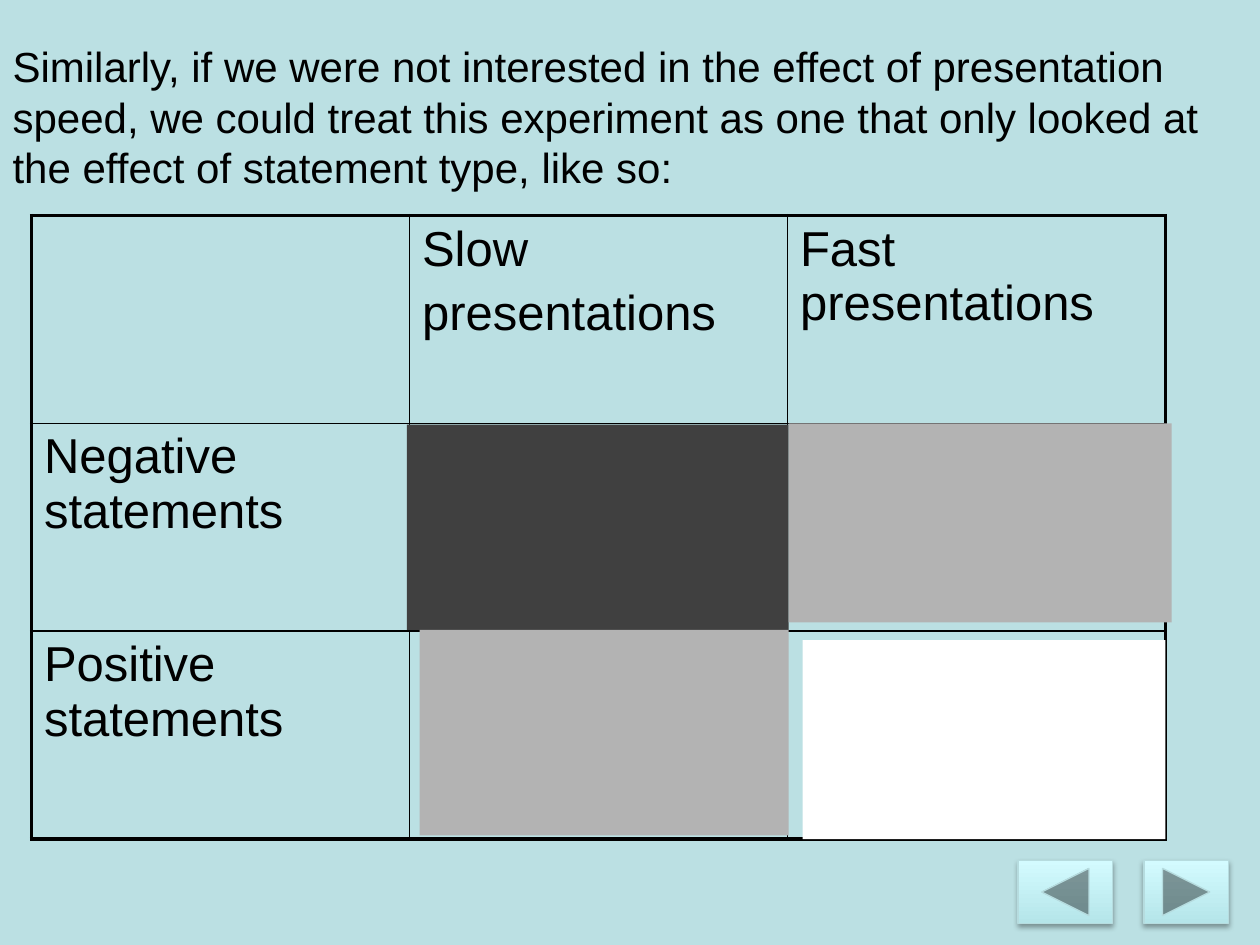
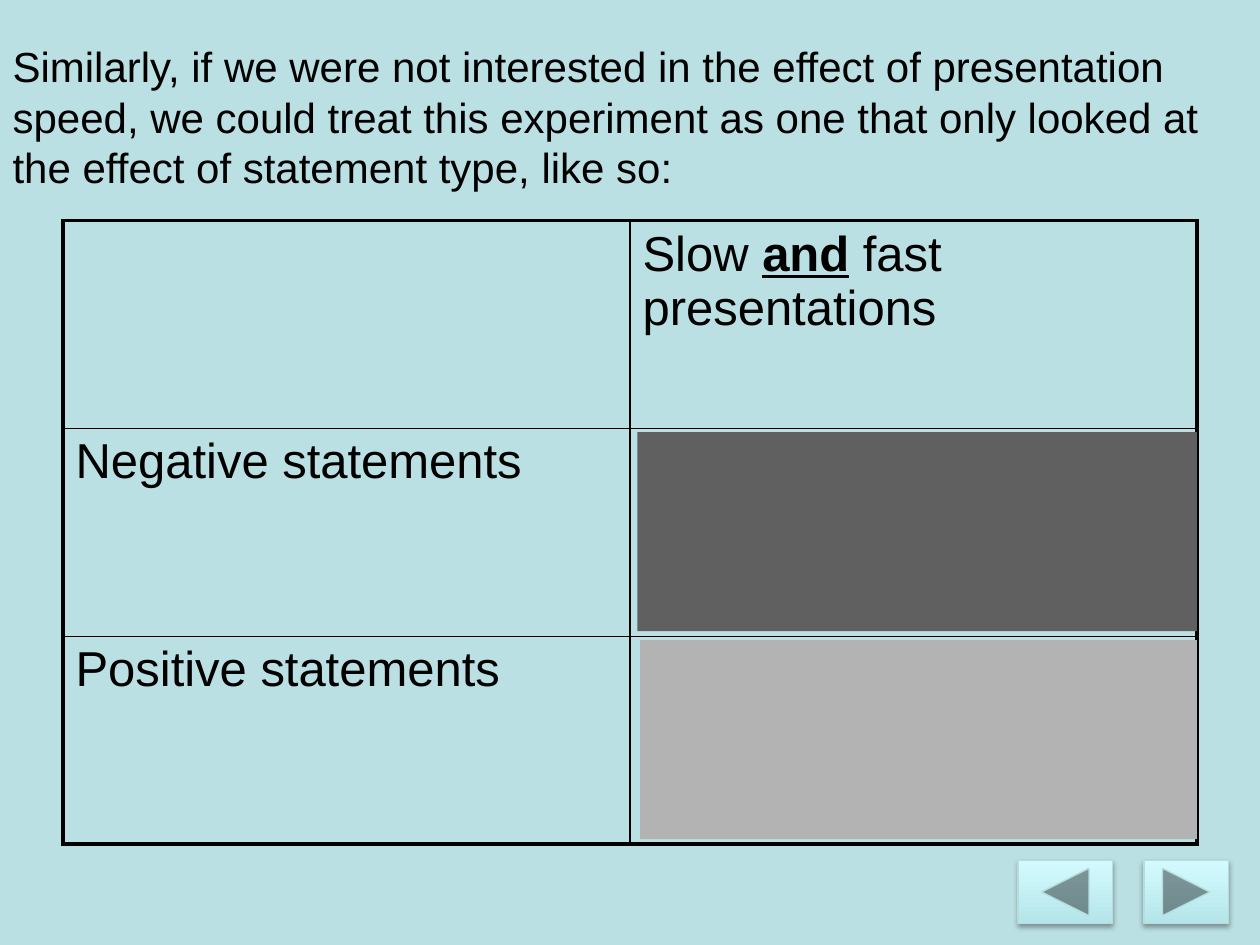
from lxml import etree
from pptx import Presentation
from pptx import util as u
from pptx.dml.color import RGBColor
from pptx.enum import shapes, text
from pptx.oxml import parse_xml
from pptx.oxml.ns import nsdecls

C = {k: RGBColor.from_string(v) for k, v in {
    "back": "BBE0E3", "ink": "000000", "white": "FFFFFF", "light": "B3B3B3",
    "mid": "606060", "dark": "404040", "button_low": "B5E5E9",
    "button_high": "D3FBFF", "button_line": "B6DCDF"}.items()}
INTRO = ("Similarly, if we were not interested in the effect of presentation speed, "
         "we could treat this experiment as one that only looked at the effect of "
         "statement type, like so:")
PLAIN, STRESSED = {}, {"bold": True, "underline": True}
THIN, THICK = 1, 2.25
TABLE_W, TABLE_H = 36, 19.8

prs = Presentation()
prs.slide_width, prs.slide_height = u.Inches(10), u.Inches(7.5)
COL, ROW = prs.slide_width / 40, prs.slide_height / 30


def grid(left, top, width, height):
    """Turn grid columns and rows into a position and size."""
    return [round(n * unit) for n, unit in
            zip((left, top, width, height), (COL, ROW, COL, ROW))]


def add_run(p, words, size, **style):
    r = p.add_run()
    r.text = words
    r.font.color.rgb = C["ink"]
    for name, value in {"name": "Arial", "size": u.Pt(size), **style}.items():
        setattr(r.font, name, value)


# Each header cell is a list of paragraphs, each paragraph a list of runs.
pages = [
    {"table": (1, 6.84),
     "headers": [[[("Slow", PLAIN)], [("presentations", PLAIN)]],
                 [[("Fast presentations", PLAIN)]]],
     "blocks": [("white", (25.48, 20.32, 11.52, 6.32)),
                ("dark", (12.92, 13.48, 12.12, 6.52)),
                ("light", (13.32, 20, 11.72, 6.52)),
                ("light", (25.04, 13.44, 12.16, 6.32))]},
    {"table": (2, 7),
     "headers": [[[("Slow ", PLAIN), ("and", STRESSED), (" fast presentations", PLAIN)]]],
     "blocks": [("light", (20.32, 20.32, 17.68, 6.32)),
                ("mid", (20.24, 13.72, 17.76, 6.32))]},
]

# Shared background and navigation buttons
layout = prs.slide_layouts[5]
bg = prs.slide_master.background.fill
bg.solid()
bg.fore_color.rgb = C["back"]
slides = [prs.slides.add_slide(layout) for _ in pages]

Kind = shapes.MSO_SHAPE
for kind, left, width in [(Kind.ACTION_BUTTON_FORWARD_OR_NEXT, 36.32, 2.68),
                          (Kind.ACTION_BUTTON_BACK_OR_PREVIOUS, 32.32, 3)]:
    sp = slides[0].shapes.add_shape(kind, *grid(left, 27.32, width, 2))
    sp.fill.gradient()
    sp.fill.gradient_angle = 90
    for stop, colour in zip(sp.fill.gradient_stops, ("button_low", "button_high")):
        stop.color.rgb = C[colour]
    sp.line.color.rgb = C["button_line"]
    sp.line.width = u.Pt(0.75)
    sp.element.spPr.append(parse_xml(
        f'<a:effectLst {nsdecls("a")}><a:outerShdw blurRad="{u.Pt(3.1)}" '
        f'dist="{u.Pt(1.8)}" dir="5400000" rotWithShape="0"><a:srgbClr val="{C["ink"]}">'
        '<a:alpha val="35000"/></a:srgbClr></a:outerShdw></a:effectLst>'))
    layout.shapes.element.append(sp.element)

for s, page in zip(slides, pages):
    # Title
    title = s.shapes.title
    title.left, title.top, title.width, title.height = grid(0, 1.2, 40, 5)
    tf = title.text_frame
    for name, value in {"vertical_anchor": text.MSO_ANCHOR.MIDDLE, "word_wrap": True,
                        "auto_size": text.MSO_AUTO_SIZE.NONE}.items():
        setattr(tf, name, value)
    tf.paragraphs[0].alignment = text.PP_ALIGN.LEFT
    add_run(tf.paragraphs[0], INTRO, 24)

    # Table
    rows = [[[], *page["headers"]]]
    for label in ("Negative statements", "Positive statements"):
        rows.append([[[(label, PLAIN)]]] + [[] for _ in page["headers"]])
    n_rows, n_cols = len(rows), len(rows[0])
    table = s.shapes.add_table(n_rows, n_cols,
                               *grid(*page["table"], TABLE_W, TABLE_H)).table
    table.first_row = table.horz_banding = False
    for column in table.columns:
        column.width = round(TABLE_W * COL / n_cols)
    for row in table.rows:
        row.height = round(TABLE_H * ROW / n_rows)
    for i, row in enumerate(rows):
        for j, paragraphs in enumerate(row):
            cell = table.cell(i, j)
            tf = cell.text_frame
            for k, runs in enumerate(paragraphs):
                p = tf.add_paragraph() if k else tf.paragraphs[0]
                p.space_before = u.Pt(5.6)
                for words, style in runs:
                    add_run(p, words, 28, **style)
            tcPr = cell._tc.get_or_add_tcPr()
            for side, outer in {"L": j == 0, "R": j == n_cols - 1,
                                "T": i == 0, "B": i == n_rows - 1}.items():
                width = u.Pt(THICK if outer else THIN)
                tcPr.append(parse_xml(
                    f'<a:ln{side} {nsdecls("a")} w="{width}"><a:solidFill>'
                    f'<a:srgbClr val="{C["ink"]}"/></a:solidFill></a:ln{side}>'))
            cell.fill.background()

    # Shaded blocks over the data cells
    for colour, place in page["blocks"]:
        sp = s.shapes.add_shape(Kind.RECTANGLE, *grid(*place))
        sp.shadow.inherit = False
        sp.fill.solid()
        sp.fill.fore_color.rgb = C[colour]
        sp.line.fill.background()

prs.save("out.pptx")
